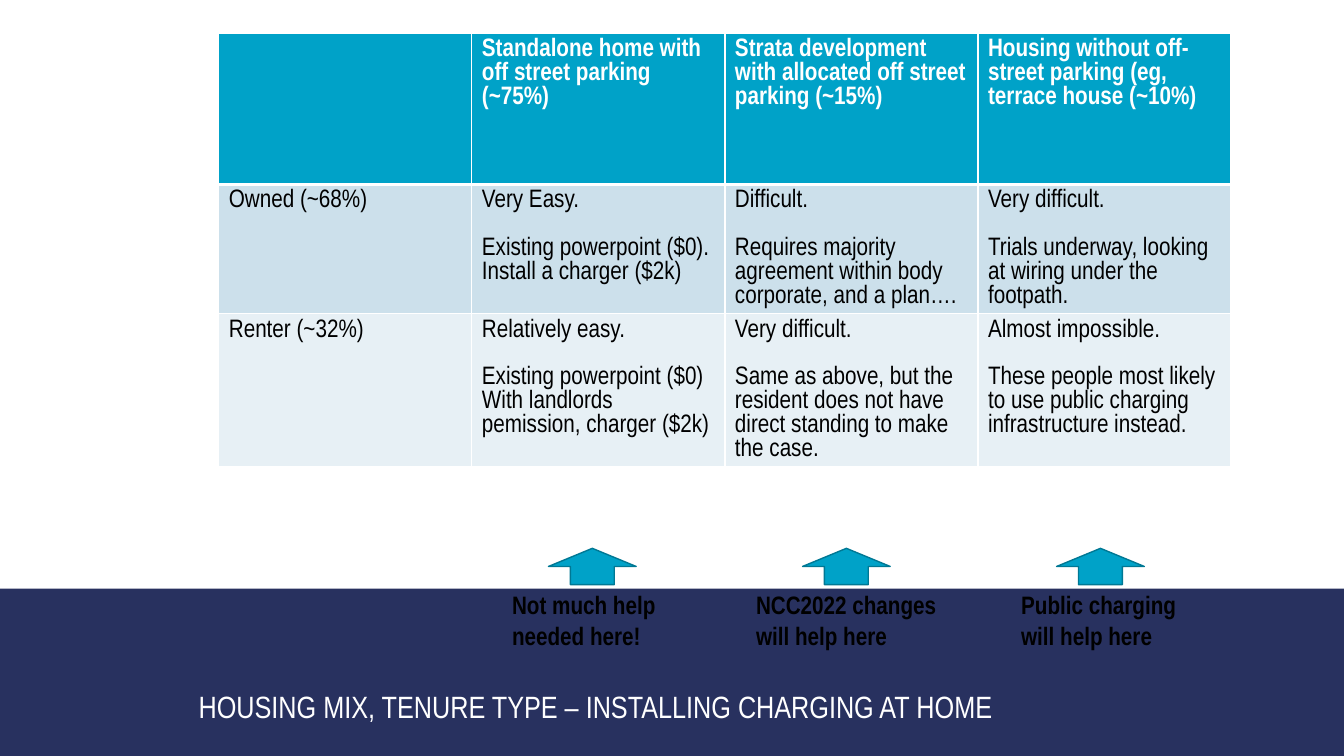
"""Build a slide on how hard home charging is by housing mix and tenure type."""
from dataclasses import dataclass

from lxml import etree
from pptx import Presentation
from pptx.dml.color import RGBColor
from pptx.enum.shapes import MSO_SHAPE
from pptx.enum.text import MSO_ANCHOR, PP_ALIGN
from pptx.oxml.ns import qn
from pptx.slide import Slide
from pptx.table import _Cell
from pptx.text.text import TextFrame
from pptx.util import Inches, Pt

RECTANGLE = MSO_SHAPE.RECTANGLE
UP_ARROW = MSO_SHAPE.UP_ARROW
MIDDLE = MSO_ANCHOR.MIDDLE
LEFT = PP_ALIGN.LEFT

WHITE = RGBColor(0xFF, 0xFF, 0xFF)
BLACK = RGBColor(0x00, 0x00, 0x00)
NAVY = RGBColor(0x28, 0x31, 0x5F)
CYAN = RGBColor(0x00, 0xA2, 0xC8)
DARK_CYAN = RGBColor(0x00, 0x78, 0x94)
PALE_BLUE = RGBColor(0xCC, 0xE0, 0xEB)
PALER_BLUE = RGBColor(0xE7, 0xF0, 0xF5)

FONT = "Arial Narrow"
TITLE = "HOUSING MIX, TENURE TYPE – INSTALLING CHARGING AT HOME"
TABLE_LINE = Pt(17)
COLUMN_WIDTH = 2.51
ARROW_LEFT = 5.44
ARROW_STEP = 2.52


@dataclass(frozen=True)
class TenureRow:
    height: float
    fill: RGBColor
    color: RGBColor
    bold: bool
    bottom_border: int
    cells: tuple[str, ...]


@dataclass(frozen=True)
class HelpNote:
    left: float
    width: float
    text: str


ROWS = (
    TenureRow(1.5, CYAN, WHITE, True, 3, (
        "",
        "Standalone home with off street parking (~75%)",
        "Strata development with allocated off street parking (~15%)",
        "Housing without off-street parking (eg, terrace house (~10%)",
    )),
    TenureRow(1.27, PALE_BLUE, BLACK, False, 1, (
        "Owned (~68%)",
        "Very Easy.\nExisting powerpoint ($0).\nInstall a charger ($2k)",
        "Difficult.\nRequires majority agreement within body corporate, and a plan….",
        "Very difficult.\nTrials underway, looking at wiring under the footpath.",
    )),
    TenureRow(1.5, PALER_BLUE, BLACK, False, 1, (
        "Renter (~32%)",
        "Relatively easy.\nExisting powerpoint ($0)\nWith landlords pemission, charger ($2k)",
        "Very difficult.\nSame as above, but the resident does not have direct standing to make the case.",
        "Almost impossible.\nThese people most likely to use public charging infrastructure instead.",
    )),
)

HELP_NOTES = (
    HelpNote(4.98, 2.21, "Not much help needed here!"),
    HelpNote(7.4, 2.21, "NCC2022 changes will help here"),
    HelpNote(10.03, 2, "Public charging will help here"),
)


def style_text(frame: TextFrame, size: int, color: RGBColor, bold: bool) -> None:
    for paragraph in frame.paragraphs:
        paragraph.alignment = LEFT
        font = paragraph.font
        font.name, font.size, font.bold = FONT, Pt(size), bold
        font.color.rgb = color


def set_borders(cell: _Cell, top: int, bottom: int) -> None:
    properties = cell._tc.get_or_add_tcPr()
    widths = {"a:lnL": 1, "a:lnR": 1, "a:lnT": top, "a:lnB": bottom}
    for position, (side, width) in enumerate(widths.items()):
        line = etree.Element(qn(side), w=str(Pt(width)))
        fill = etree.SubElement(line, qn("a:solidFill"))
        etree.SubElement(fill, qn("a:srgbClr"), val=str(WHITE))
        properties.insert(position, line)


def add_title(slide: Slide) -> None:
    title = slide.shapes.title
    title.left, title.top = Inches(1.97), Inches(6.52)
    title.width, title.height = Inches(9.06), Inches(0.98)
    frame = title.text_frame
    frame.text = TITLE
    frame.word_wrap = True
    frame.vertical_anchor = MIDDLE
    frame.margin_left = frame.margin_right = 0
    frame.margin_top = frame.margin_bottom = 0
    frame.paragraphs[0].line_spacing = Pt(26)
    style_text(frame, 22, WHITE, False)


def add_footer_band(slide: Slide) -> None:
    band = slide.shapes.add_shape(
        RECTANGLE, 0, Inches(5.84), Inches(13.33), Inches(1.66))
    band.shadow.inherit = False
    band.fill.solid()
    band.fill.fore_color.rgb = NAVY
    band.line.fill.background()
    slide.shapes.title.element.addprevious(band.element)


def add_tenure_table(slide: Slide) -> None:
    column_count = len(ROWS[0].cells)
    table = slide.shapes.add_table(
        len(ROWS), column_count, Inches(2.17), Inches(0.33),
        Inches(COLUMN_WIDTH * column_count),
        Inches(sum(row.height for row in ROWS))).table
    for column in table.columns:
        column.width = Inches(COLUMN_WIDTH)
    top_border = 1
    for row_index, row in enumerate(ROWS):
        table.rows[row_index].height = Inches(row.height)
        for column_index, text in enumerate(row.cells):
            cell = table.cell(row_index, column_index)
            cell.fill.solid()
            cell.fill.fore_color.rgb = row.fill
            set_borders(cell, top_border, row.bottom_border)
            frame = cell.text_frame
            frame.text = text
            style_text(frame, 18, row.color, row.bold)
            for paragraph in frame.paragraphs:
                paragraph.line_spacing = TABLE_LINE
            for detail in frame.paragraphs[1:2]:
                detail.space_before = TABLE_LINE
        top_border = row.bottom_border


def add_help_note(slide: Slide, note: HelpNote, arrow_left: float) -> None:
    label = slide.shapes.add_textbox(
        Inches(note.left), Inches(5.8), Inches(note.width), Inches(0.71))
    label.text_frame.word_wrap = True
    label.text_frame.text = note.text
    style_text(label.text_frame, 18, BLACK, True)

    arrow = slide.shapes.add_shape(
        UP_ARROW, Inches(arrow_left), Inches(5.44), Inches(0.87), Inches(0.36))
    arrow.shadow.inherit = False
    arrow.fill.solid()
    arrow.fill.fore_color.rgb = CYAN
    arrow.line.color.rgb = DARK_CYAN
    arrow.line.width = Pt(1)


def main() -> None:
    presentation = Presentation()
    presentation.slide_width = Inches(13.33)
    presentation.slide_height = Inches(7.5)
    title_only = presentation.slide_layouts.get_by_name("Title Only")
    slide = presentation.slides.add_slide(title_only)
    add_title(slide)
    add_footer_band(slide)
    add_tenure_table(slide)
    for index, note in enumerate(HELP_NOTES):
        add_help_note(slide, note, ARROW_LEFT + index * ARROW_STEP)
    presentation.save("out.pptx")


if __name__ == "__main__":
    main()
